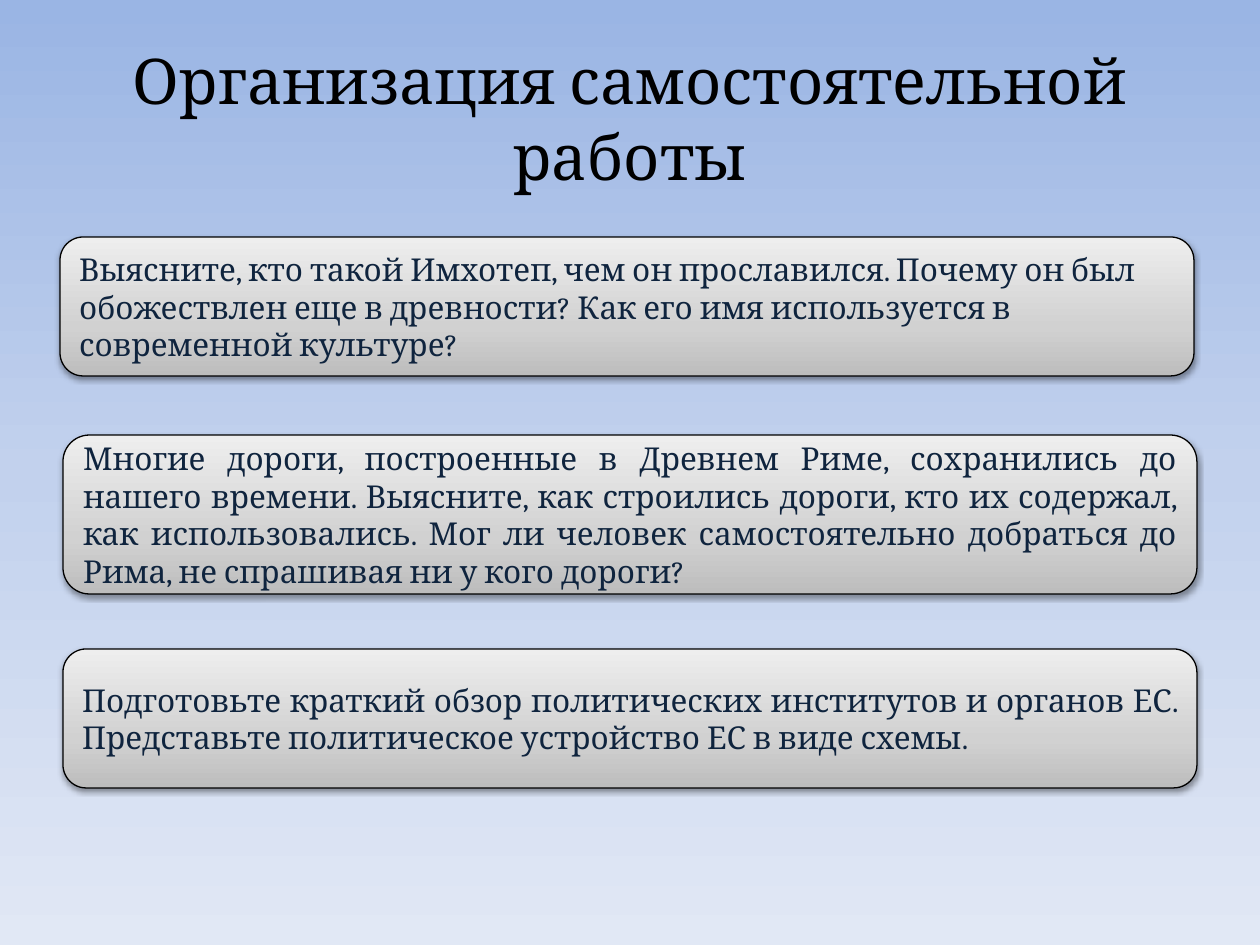
"""Build a slide that lists three independent-study tasks on gradient cards."""
from dataclasses import dataclass

from lxml import etree
from pptx import Presentation
from pptx import util as u
from pptx.dml.color import RGBColor
from pptx.dml.fill import FillFormat
from pptx.enum import shapes, text
from pptx.oxml.ns import qn
from pptx.slide import Slide
from pptx.text.text import TextFrame

PX_PER_INCH = 126
Stops = tuple[tuple[int, str], ...]


@dataclass(frozen=True)
class Theme:
    font: str = "Cambria"
    heading_size: int = 36
    task_size: int = 18
    heading: str = "000000"
    task: str = "0F243E"
    outline: str = "000000"
    shadow: str = "000000"
    sky: Stops = ((0, "9AB5E4"), (50, "C2D1ED"), (100, "E1E8F5"))
    card: Stops = ((0, "BDBDBD"), (35, "D1D1D1"), (100, "EEEEEE"))


@dataclass(frozen=True)
class Box:
    left: int
    top: int
    width: int
    height: int

    def emu(self) -> tuple[int, ...]:
        return tuple(px(side) for side in (self.left, self.top, self.width, self.height))


@dataclass(frozen=True)
class Task:
    box: Box
    wording: str
    align: text.PP_ALIGN = text.PP_ALIGN.JUSTIFY


THEME = Theme()
CARD_WIDTH = 1134
HEADING_BOX = Box(63, 38, CARD_WIDTH, 158)
TASKS = (
    Task(
        Box(60, 237, CARD_WIDTH, 139),
        "Выясните, кто такой Имхотеп, чем он прославился. Почему он был обожествлен "
        "еще в древности? Как его имя используется в современной культуре?",
        text.PP_ALIGN.LEFT,
    ),
    Task(
        Box(63, 435, CARD_WIDTH, 159),
        "Многие дороги, построенные в Древнем Риме, сохранились до нашего времени. "
        "Выясните, как строились дороги, кто их содержал, как использовались. Мог ли "
        "человек самостоятельно добраться до Рима, не спрашивая ни у кого дороги?",
    ),
    Task(
        Box(63, 649, CARD_WIDTH, 139),
        "Подготовьте краткий обзор политических институтов и органов ЕС. "
        "Представьте политическое устройство ЕС в виде схемы.",
    ),
)


def px(length: int) -> int:
    return u.Inches(length / PX_PER_INCH)


def add_color(parent: etree._Element, color: str) -> etree._Element:
    return etree.SubElement(parent, qn("a:srgbClr"), val=color)


def paint_gradient(fill: FillFormat, owner: etree._Element, stops: Stops, angle: int) -> None:
    fill.gradient()
    fill.gradient_angle = angle
    stop_list = next(owner.iter(qn("a:gsLst")))
    for default_stop in list(stop_list):
        stop_list.remove(default_stop)
    for percent, color in stops:
        add_color(etree.SubElement(stop_list, qn("a:gs"), pos=str(percent * 1000)), color)


def add_shadow(properties: etree._Element) -> None:
    shadow = etree.SubElement(
        properties.find(qn("a:effectLst")), qn("a:outerShdw"),
        blurRad="40000", dist="20000", dir="5400000", rotWithShape="0",
    )
    etree.SubElement(add_color(shadow, THEME.shadow), qn("a:alpha"), val="38000")


def write(frame: TextFrame, wording: str, size: int, color: str, align: text.PP_ALIGN) -> None:
    frame.word_wrap = True
    frame.vertical_anchor = text.MSO_ANCHOR.MIDDLE
    paragraph = frame.paragraphs[0]
    paragraph.text = wording
    paragraph.alignment = align
    paragraph.font.name = THEME.font
    paragraph.font.size = u.Pt(size)
    paragraph.font.color.rgb = RGBColor.from_string(color)


def draw_task(slide: Slide, task: Task) -> None:
    card = slide.shapes.add_shape(shapes.MSO_SHAPE.ROUNDED_RECTANGLE, *task.box.emu())
    properties = card.element.spPr
    paint_gradient(card.fill, properties, THEME.card, 90)
    card.line.color.rgb = RGBColor.from_string(THEME.outline)
    card.line.width = u.Pt(0.75)
    card.shadow.inherit = False
    add_shadow(properties)
    write(card.text_frame, task.wording, THEME.task_size, THEME.task, task.align)


def main() -> None:
    deck = Presentation()
    deck.slide_width, deck.slide_height = u.Inches(10), u.Inches(7.5)
    slide = deck.slides.add_slide(deck.slide_layouts[6])
    paint_gradient(slide.background.fill, slide.element, THEME.sky, 270)
    heading = slide.shapes.add_textbox(*HEADING_BOX.emu())
    write(heading.text_frame, "Организация самостоятельной работы",
          THEME.heading_size, THEME.heading, text.PP_ALIGN.CENTER)
    for task in TASKS:
        draw_task(slide, task)
    deck.save("out.pptx")


if __name__ == "__main__":
    main()
